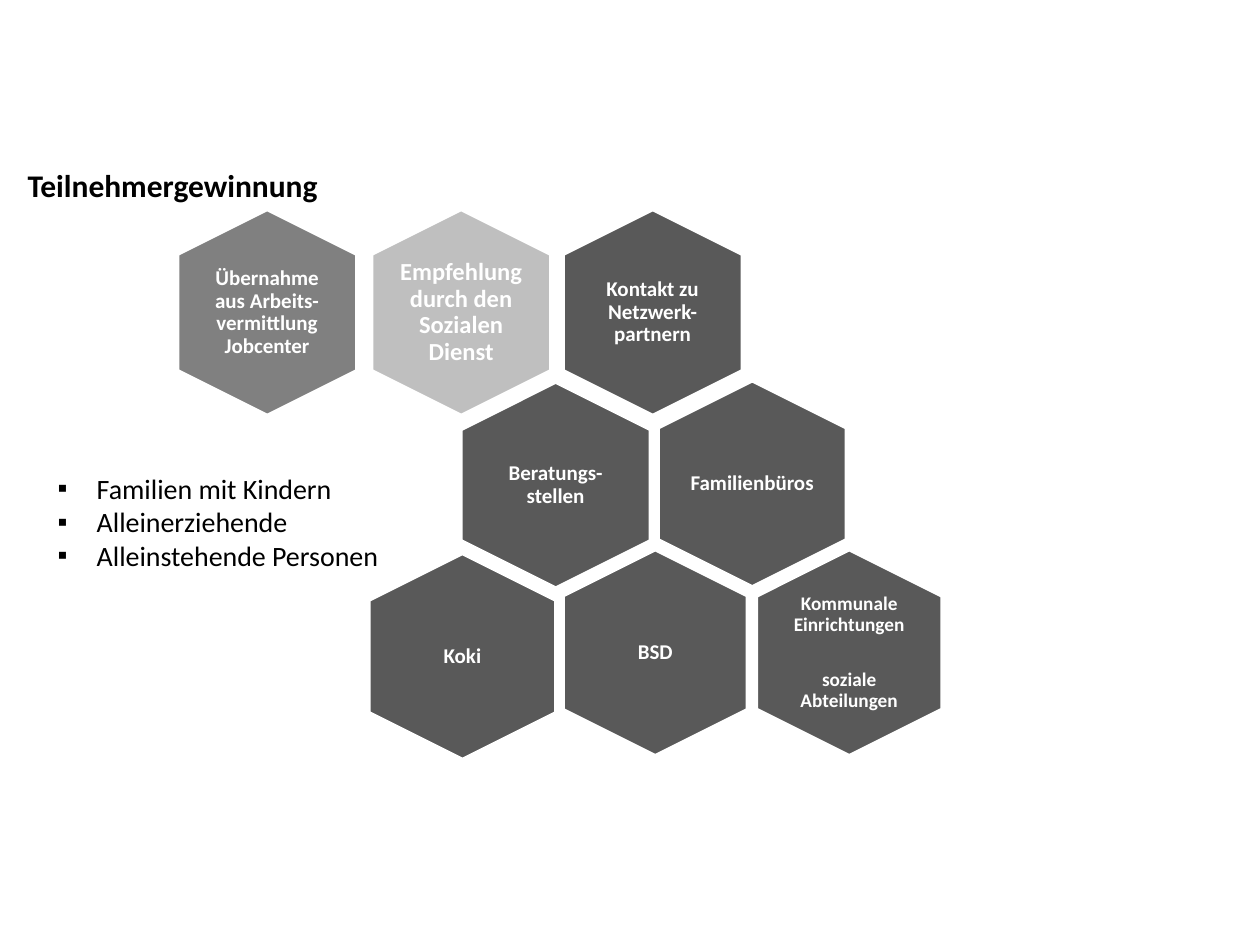
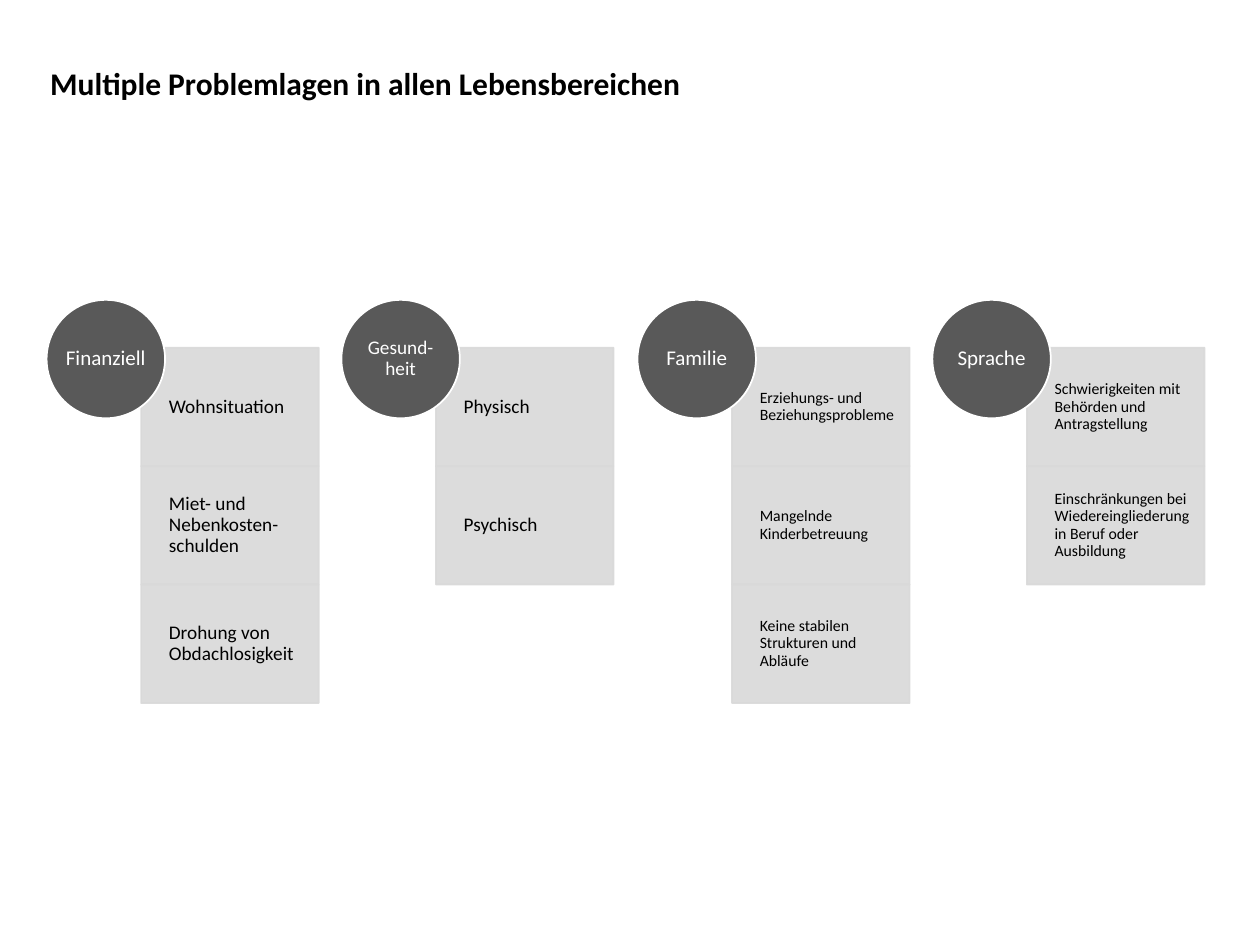
from dataclasses import dataclass

from lxml import etree
from pptx import Presentation
from pptx.dml.color import RGBColor
from pptx.enum.shapes import MSO_SHAPE
from pptx.enum.text import MSO_ANCHOR, MSO_AUTO_SIZE, PP_ALIGN
from pptx.oxml.ns import qn
from pptx.util import Pt

EMU_PER_PX = 9144
SLIDE_SIZE = (1000, 750)
HEXAGON, CIRCLE, RECTANGLE = MSO_SHAPE.HEXAGON, MSO_SHAPE.OVAL, MSO_SHAPE.RECTANGLE
TOP, MIDDLE = MSO_ANCHOR.TOP, MSO_ANCHOR.MIDDLE
LEFT, CENTER = PP_ALIGN.LEFT, PP_ALIGN.CENTER
GROW = MSO_AUTO_SIZE.SHAPE_TO_FIT_TEXT


@dataclass(frozen=True)
class Theme:
    font: str = "Calibri"
    black: str = "000000"
    white: str = "FFFFFF"
    dark: str = "595959"
    medium: str = "808080"
    light: str = "BFBFBF"
    panel: str = "D9D9D9"
    panel_opacity: int = 90
    title: int = 18
    body: int = 16
    emphasis: int = 14
    label: int = 12
    detail: int = 11
    small: int = 9
    line_width: int = 1
    tight: float = 0.9


THEME = Theme()

HEXAGON_HEIGHT = 162
HEXAGON_TEXT_HEIGHT = 111
HEXAGON_TEXT_SHARE = 0.685
CHANNELS = [
    (81, 82, 141, THEME.medium, THEME.label, 5, ["Übernahme aus Arbeits-vermittlung Jobcenter"]),
    (235, 82, 141, THEME.light, THEME.emphasis, 0, ["Empfehlung durch den Sozialen Dienst"]),
    (387, 82, 141, THEME.dark, THEME.label, 5, ["Kontakt zu Netzwerk-partnern"]),
    (466, 218, 148, THEME.dark, THEME.label, 0, ["Familienbüros"]),
    (543, 352, 146, THEME.dark, THEME.detail, 5, ["Kommunale Einrichtungen", "soziale Abteilungen"]),
    (310, 219, 149, THEME.dark, THEME.label, 0, ["Beratungs-stellen"]),
    (389, 352, 145, THEME.dark, THEME.label, 5, ["BSD"]),
    (236, 355, 147, THEME.dark, THEME.label, 0, ["Koki"]),
]
TARGET_GROUPS = ["Familien mit Kindern", "Alleinerziehende", "Alleinstehende Personen"]

LIFE_AREAS = [
    ("Finanziell", THEME.label, THEME.detail, 9,
     ["Wohnsituation", "Miet- und Nebenkosten-schulden", "Drohung von Obdachlosigkeit"]),
    ("Gesund-heit", THEME.detail, THEME.detail, 9, ["Physisch", "Psychisch"]),
    ("Familie", THEME.label, THEME.small, 7,
     ["Erziehungs- und Beziehungsprobleme", "Mangelnde Kinderbetreuung",
      "Keine stabilen Strukturen und Abläufe"]),
    ("Sprache", THEME.label, THEME.small, 7,
     ["Schwierigkeiten mit Behörden und Antragstellung",
      "Einschränkungen bei Wiedereingliederung in Beruf oder Ausbildung"]),
]


def px(*lengths):
    return [round(length * EMU_PER_PX) for length in lengths]


def set_opacity(color_format_owner, percent):
    for color in color_format_owner.iter(qn("a:srgbClr")):
        etree.SubElement(color, qn("a:alpha"), val=str(percent * 1000))


def add_outline_shape(shapes, kind, box, fill, line):
    shape = shapes.add_shape(kind, *px(*box))
    shape.shadow.inherit = False
    shape.fill.solid()
    shape.fill.fore_color.rgb = RGBColor.from_string(fill)
    shape.line.color.rgb = RGBColor.from_string(line)
    shape.line.width = Pt(THEME.line_width)
    return shape


def add_bullet(paragraph, indent):
    properties = paragraph._p.get_or_add_pPr()
    width = px(indent)[0]
    properties.set("marL", str(width))
    properties.set("indent", str(-width))
    etree.SubElement(properties, qn("a:buFont"), typeface="Arial")
    etree.SubElement(properties, qn("a:buChar"), char="▪")


def add_text(shapes, box, lines, size, color=THEME.black, bold=False, align=LEFT,
             anchor=TOP, insets=(10, 5, 10, 5), spacing=None, gap=0, bullet_indent=0):
    textbox = shapes.add_textbox(*px(*box))
    frame = textbox.text_frame
    frame.word_wrap = True
    frame.vertical_anchor = anchor
    (frame.margin_left, frame.margin_top,
     frame.margin_right, frame.margin_bottom) = px(*insets)
    for index, line in enumerate(lines):
        paragraph = frame.add_paragraph() if index else frame.paragraphs[0]
        paragraph.alignment = align
        if spacing:
            paragraph.line_spacing = spacing
        if index and gap:
            paragraph.space_before = Pt(gap)
        if bullet_indent:
            add_bullet(paragraph, bullet_indent)
        run = paragraph.add_run()
        run.text = line
        run.font.name = THEME.font
        run.font.size = Pt(size)
        run.font.bold = bold
        run.font.color.rgb = RGBColor.from_string(color)
    return frame


def add_title(slide, box, title):
    frame = add_text(slide.shapes, box, [title], THEME.title, bold=True)
    frame.auto_size = GROW


def add_honeycomb(slide, box):
    left, top = box
    comb = slide.shapes.add_group_shape().shapes
    for x, y, width, fill, size, inset, lines in CHANNELS:
        center_x, center_y = left + x, top + y
        hexagon = add_outline_shape(
            comb, HEXAGON,
            (center_x - HEXAGON_HEIGHT / 2, center_y - width / 2, HEXAGON_HEIGHT, width),
            fill, THEME.white)
        hexagon.rotation = 90
        hexagon.adjustments[0] = 0.25
        text_width = round(width * HEXAGON_TEXT_SHARE)
        add_text(comb,
                 (center_x - text_width / 2, center_y - HEXAGON_TEXT_HEIGHT / 2,
                  text_width, HEXAGON_TEXT_HEIGHT),
                 lines, size, THEME.white, True, CENTER, MIDDLE,
                 (inset,) * 4, THEME.tight, gap=20)


def add_target_groups(slide, box):
    add_text(slide.shapes, box, TARGET_GROUPS, THEME.body, bullet_indent=31)


def add_life_area(shapes, box, area):
    left, top, width = box
    name, name_size, problem_size, inset, problems = area
    diameter, panel_left, panel_top, panel_height = 94, 75, 38, 94
    text_left, label_offset = 97, 14
    for row, problem in enumerate(problems):
        y = top + panel_top + row * panel_height
        panel = add_outline_shape(
            shapes, RECTANGLE, (left + panel_left, y, width - panel_left, panel_height),
            THEME.panel, THEME.panel)
        set_opacity(panel._element.spPr, THEME.panel_opacity)
        add_text(shapes, (left + text_left, y, width - text_left, panel_height),
                 [problem], problem_size, anchor=MIDDLE,
                 insets=(0, inset, inset, inset), spacing=THEME.tight)
    add_outline_shape(shapes, CIRCLE, (left, top, diameter, diameter), THEME.dark, THEME.white)
    label_size = diameter - 2 * label_offset
    add_text(shapes, (left + label_offset, top + label_offset, label_size, label_size),
             [name], name_size, THEME.white, align=CENTER, anchor=MIDDLE,
             insets=(0,) * 4, spacing=THEME.tight)


def add_life_areas(slide, box):
    left, top, width = box
    area_width = 216
    step = (width - area_width) / (len(LIFE_AREAS) - 1)
    areas = slide.shapes.add_group_shape().shapes
    for index, area in enumerate(LIFE_AREAS):
        add_life_area(areas, (left + round(index * step), top, area_width), area)


def build_recruitment_slide(slide):
    add_honeycomb(slide, (131, 166))
    add_title(slide, (12, 127, 259, 40), "Teilnehmergewinnung")
    add_target_groups(slide, (36, 369, 310, 118))


def build_problems_slide(slide):
    add_life_areas(slide, (37, 238, 919))
    add_title(slide, (30, 46, 617, 40), "Multiple Problemlagen in allen Lebensbereichen")


def main():
    presentation = Presentation()
    presentation.slide_width, presentation.slide_height = px(*SLIDE_SIZE)
    blank = presentation.slide_layouts[6]
    for build in (build_recruitment_slide, build_problems_slide):
        build(presentation.slides.add_slide(blank))
    presentation.save("out.pptx")


if __name__ == "__main__":
    main()
